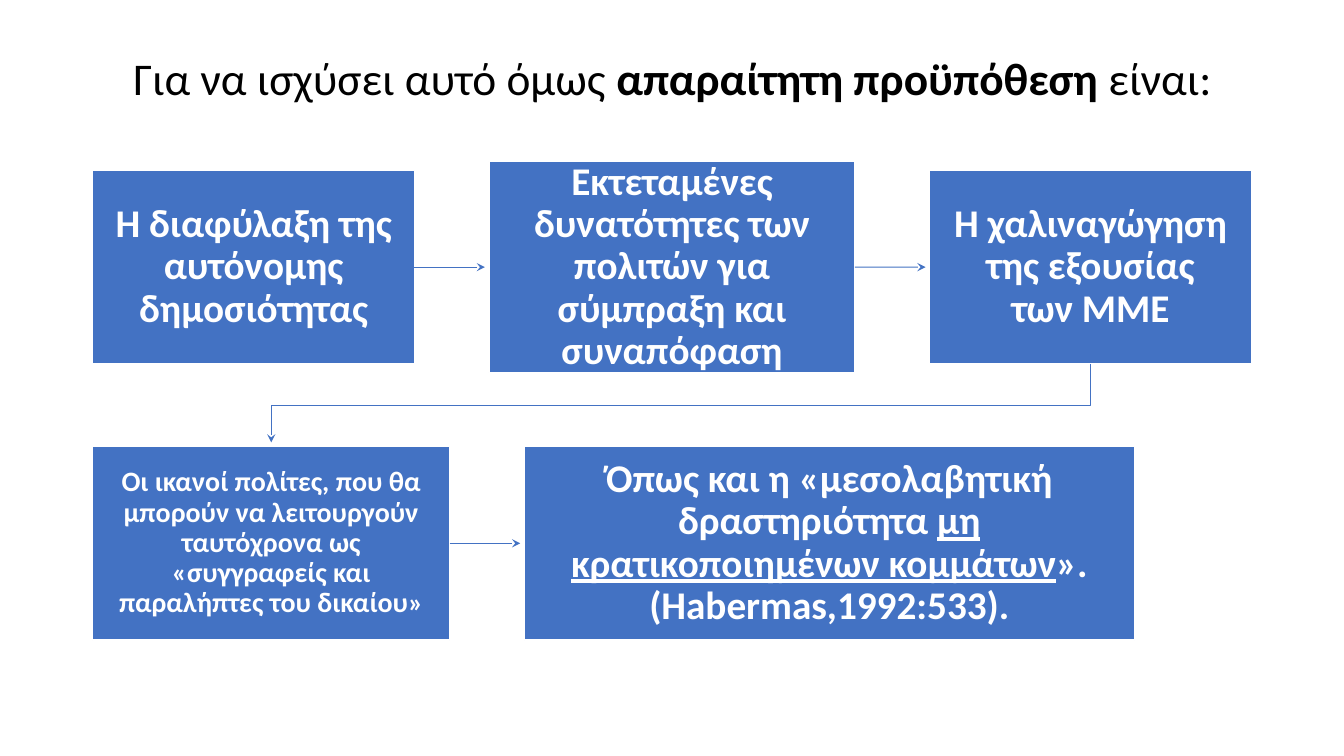
from lxml.etree import SubElement
from pptx import Presentation
from pptx.dml.color import RGBColor
from pptx.enum.shapes import MSO_CONNECTOR as Connector, MSO_SHAPE as Shape
from pptx.enum.text import MSO_ANCHOR as Anchor, MSO_AUTO_SIZE as AutoSize, PP_ALIGN as Align
from pptx.oxml.ns import qn
from pptx.util import Inches, Pt

BLUE, WHITE, BLACK = "4372C3", "FFFFFF", "000000"
LEFT, BOX_GAP, ARROW_GAP = 0.92, 0.74, 0.04

TITLE = [("Για να ισχύσει αυτό όμως ", ""), ("απαραίτητη προϋπόθεση", "bold"), (" είναι:", "")]

# Each step: width, height, text size, inset, spans
TOP_ROW = [
    (3.19, 1.92, 28, 0.22, [("Η διαφύλαξη της αυτόνομης δημοσιότητας", "")]),
    (3.63, 2.09, 28, 0.22,
     [("Εκτεταμένες δυνατότητες των πολιτών για σύμπραξη και συναπόφαση", "")]),
    (3.19, 1.92, 28, 0.22, [("Η χαλιναγώγηση της εξουσίας των ΜΜΕ", "")]),
]
BOTTOM_ROW = [
    (3.54, 1.92, 20, 0.16,
     [("Οι ικανοί πολίτες, που θα μπορούν να λειτουργούν ταυτόχρονα ως "
       "«συγγραφείς και παραλήπτες του δικαίου»", "")]),
    (6.05, 1.92, 28, 0.22,
     [("Όπως και η «μεσολαβητική δραστηριότητα ", ""),
      ("μη κρατικοποιημένων κομμάτων", "underline"),
      ("». (Habermas,1992:533).", "")]),
]


def color(hex_value):
    return RGBColor.from_string(hex_value)


def write(frame, spans, size, hex_value, bold=False):
    frame.word_wrap = True
    frame.auto_size = AutoSize.NONE
    frame.vertical_anchor = Anchor.MIDDLE
    para = frame.paragraphs[0]
    para.alignment = Align.CENTER
    para.line_spacing = 0.9
    para.font.name = "Calibri"
    para.font.size = Pt(size)
    para.font.bold = bold
    para.font.color.rgb = color(hex_value)
    for text, style in spans:
        span = para.add_run()
        span.text = text
        if style:
            setattr(span.font, style, True)


def style_arrow(arrow):
    arrow.line.color.rgb = color(BLUE)
    arrow.line.width = Pt(0.75)
    SubElement(arrow.line._get_or_add_ln(), qn("a:tailEnd"), type="stealth")


def add_title(page, left, top, width, height):
    title = page.shapes.title
    title.left, title.top = Inches(left), Inches(top)
    title.width, title.height = Inches(width), Inches(height)
    write(title.text_frame, TITLE, 32.4, BLACK)


def add_step(page, left, middle, step):
    width, height, size, inset, spans = step
    box = page.shapes.add_shape(Shape.RECTANGLE, Inches(left), Inches(middle - height / 2),
                                Inches(width), Inches(height))
    box.shadow.inherit = False
    box.fill.solid()
    box.fill.fore_color.rgb = color(BLUE)
    box.line.color.rgb = color(WHITE)
    box.line.width = Pt(1)
    frame = box.text_frame
    frame.margin_left = frame.margin_right = Inches(inset)
    frame.margin_top = frame.margin_bottom = Inches(inset)
    write(frame, spans, size, WHITE, bold=True)
    return box


def add_row(page, left, middle, steps):
    """Place the steps side by side, with an arrow in every gap."""
    boxes = []
    for step in steps:
        box = add_step(page, left, middle, step)
        if boxes:
            arrow = page.shapes.add_connector(
                Connector.STRAIGHT, Inches(left - BOX_GAP), Inches(middle),
                Inches(left - ARROW_GAP), Inches(middle))
            arrow.begin_connect(boxes[-1], 3)
            style_arrow(arrow)
            SubElement(arrow._element.spPr, qn("a:effectLst"))
        boxes.append(box)
        left += step[0] + BOX_GAP
    return boxes


def add_return_arrow(page, start, end):
    """Lead from the bottom of one box to the top of a box in the next row."""
    start_x, start_y = start.left + start.width // 2, start.top + start.height
    end_x, end_y = end.left + end.width // 2, end.top - Inches(ARROW_GAP)
    turn_y = (start_y + end.top) // 2
    builder = page.shapes.build_freeform(start_x, start_y)
    builder.add_line_segments([(start_x, turn_y), (end_x, turn_y), (end_x, end_y)], close=False)
    arrow = builder.convert_to_shape()
    arrow.shadow.inherit = False
    arrow.fill.background()
    style_arrow(arrow)


def main():
    deck = Presentation()
    deck.slide_width, deck.slide_height = Inches(13.33), Inches(7.5)
    page = deck.slides.add_slide(deck.slide_layouts[5])
    add_title(page, LEFT, 0.4, 11.5, 0.8)
    top_boxes = add_row(page, LEFT, 2.65, TOP_ROW)
    bottom_boxes = add_row(page, LEFT, 5.39, BOTTOM_ROW)
    add_return_arrow(page, top_boxes[-1], bottom_boxes[0])
    deck.save("out.pptx")


if __name__ == "__main__":
    main()
